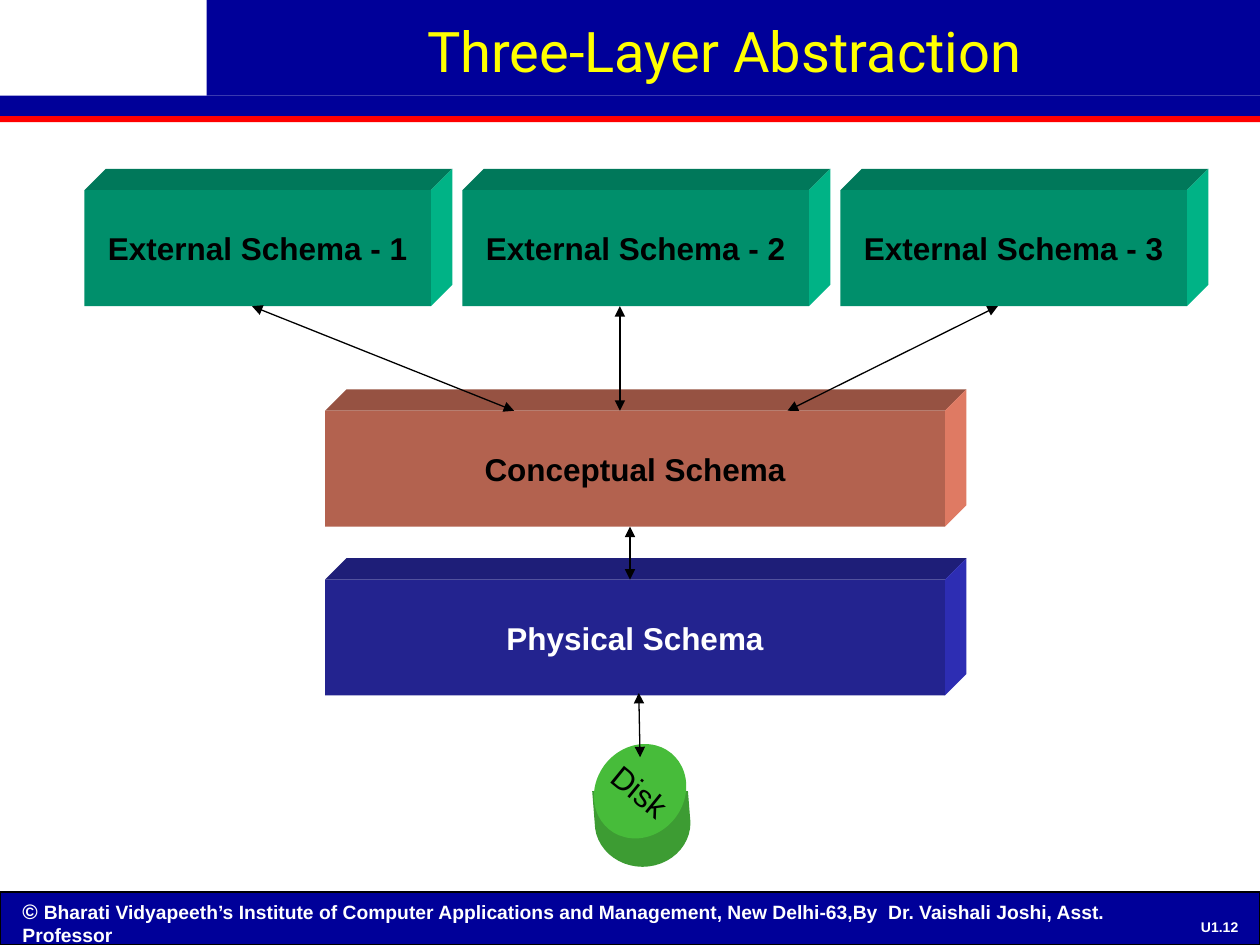
"""Build the three-layer database abstraction slide."""
from math import cos, pi, sin

from lxml.etree import SubElement
from pptx import Presentation
from pptx.dml.color import RGBColor
from pptx.enum.shapes import MSO_CONNECTOR, MSO_SHAPE
from pptx.enum.text import MSO_ANCHOR, PP_ALIGN
from pptx.oxml.ns import qn
from pptx.util import Inches, Pt

NAVY = RGBColor(0x00, 0x00, 0x99)
RED = RGBColor(0xFF, 0x00, 0x00)
YELLOW = RGBColor(0xFF, 0xFF, 0x00)
WHITE = RGBColor(0xFF, 0xFF, 0xFF)
BLACK = RGBColor(0x00, 0x00, 0x00)
GREEN = (RGBColor(0x00, 0x8F, 0x6B), RGBColor(0x00, 0x78, 0x5A), RGBColor(0x00, 0xB3, 0x86))
CORAL = (RGBColor(0xB3, 0x62, 0x4F), RGBColor(0x96, 0x52, 0x42), RGBColor(0xDF, 0x7A, 0x63))
BLUE = (RGBColor(0x23, 0x23, 0x8F), RGBColor(0x1E, 0x1E, 0x78), RGBColor(0x2D, 0x2D, 0xB3))
DISK_TOP = RGBColor(0x47, 0xBC, 0x3A)
DISK_SIDE = RGBColor(0x3D, 0x9C, 0x33)


class Deck:
    """Hold the style and the current slide."""

    font = "Arial"
    size = 18
    depth = 0.17
    box_height = 0.92

    def __init__(self):
        self.prs = Presentation()
        self.prs.slide_width = Inches(10)
        self.prs.slide_height = Inches(7.5)
        self.s = self.prs.slides.add_slide(self.prs.slide_layouts[5])

    def add_runs(self, sp, runs, color, align=PP_ALIGN.CENTER, anchor=MSO_ANCHOR.MIDDLE,
                 wrap=False, bold=True, font=None):
        tf = sp.text_frame
        tf.word_wrap = wrap
        tf.vertical_anchor = anchor
        p = tf.paragraphs[0]
        p.alignment = align
        for text, size in runs:
            r = p.add_run()
            r.text = text
            r.font.name = font or self.font
            r.font.size = Pt(size)
            r.font.bold = bold
            r.font.color.rgb = color

    def paint(self, sp, fill):
        sp.shadow.inherit = False
        sp.fill.solid()
        sp.fill.fore_color.rgb = fill
        sp.line.fill.background()
        return sp

    def shape(self, x, y, w, h, fill, kind=MSO_SHAPE.RECTANGLE):
        sp = self.s.shapes.add_shape(kind, Inches(x), Inches(y), Inches(w), Inches(h))
        return self.paint(sp, fill)

    def polygon(self, points, fill):
        first, *rest = [(Inches(x), Inches(y)) for x, y in points]
        builder = self.s.shapes.build_freeform(*first)
        builder.add_line_segments(rest)
        return self.paint(builder.convert_to_shape(), fill)

    def text(self, x, y, w, h, runs, color, **style):
        sp = self.s.shapes.add_textbox(Inches(x), Inches(y), Inches(w), Inches(h))
        self.add_runs(sp, runs, color, **style)

    def title(self, text):
        sp = self.s.shapes.title
        sp.left, sp.top, sp.width, sp.height = Inches(1.5), Inches(0.08), Inches(8.5), Inches(0.84)
        self.add_runs(sp, [(text, 32)], YELLOW, anchor=MSO_ANCHOR.TOP, wrap=True,
                      bold=False, font="Roboto")
        sp.element.getparent().append(sp.element)

    def block(self, x, y, w, text, colors, color=BLACK):
        face, top, side = colors
        d, right, bottom = self.depth, x + w, y + self.box_height
        self.polygon([(x, y), (x + d, y - d), (right + d, y - d), (right, y)], top)
        self.polygon([(right, y), (right + d, y - d), (right + d, bottom - d), (right, bottom)], side)
        self.add_runs(self.shape(x, y, w, self.box_height, face), [(text, self.size)], color)

    def disk(self, x, y, text):
        rx, ry, dx, dy = 0.38, 0.35, 0.02, 0.25
        arc = [(x + dx + rx * cos(i * pi / 24), y + dy + ry * sin(i * pi / 24)) for i in range(25)]
        self.polygon([(x - rx, y), (x + rx, y), *arc], DISK_SIDE)
        sp = self.shape(x - 0.35, y - 0.39, 0.7, 0.78, DISK_TOP, MSO_SHAPE.OVAL)
        sp.rotation = 39.1
        self.add_runs(sp, [(text, self.size)], BLACK, bold=False)

    def arrow(self, x1, y1, x2, y2):
        c = self.s.shapes.add_connector(
            MSO_CONNECTOR.STRAIGHT, Inches(x1), Inches(y1), Inches(x2), Inches(y2))
        c.line.color.rgb = BLACK
        c.line.width = Pt(0.75)
        ln = c.element.spPr.find(qn("a:ln"))
        for end in ("a:headEnd", "a:tailEnd"):
            SubElement(ln, qn(end), type="triangle")
        SubElement(c.element.spPr, qn("a:effectLst"))


def main():
    deck = Deck()
    deck.shape(0, 0.92, 10, 0.05, RED)
    deck.shape(1.64, 0, 8.36, 0.76, NAVY)
    deck.shape(0, 0.76, 10, 0.16, NAVY)
    footer = deck.shape(0, 7.08, 10, 0.42, NAVY)
    footer.line.color.rgb = BLACK
    footer.line.width = Pt(0.75)
    deck.text(0.08, 7.08, 9.48, 0.42, [
        ("© ", 12),
        ("Bharati Vidyapeeth’s Institute of Computer Applications and Management, "
         "New Delhi-63,By  Dr. Vaishali Joshi, Asst. Professor", 11),
    ], WHITE, align=PP_ALIGN.LEFT, anchor=MSO_ANCHOR.TOP, wrap=True)
    deck.text(9.42, 7.26, 0.52, 0.19, [("U1.12", 8)], WHITE)

    deck.block(2.58, 4.6, 4.92, "Physical Schema", BLUE, WHITE)
    deck.block(2.58, 3.26, 4.92, "Conceptual Schema", CORAL)
    for i in range(3):
        deck.block(0.67 + 3 * i, 1.51, 2.75, f"External Schema - {i + 1}", GREEN)
    deck.disk(5.08, 6.28, "Disk")

    for ends in [(2, 2.43, 4.08, 3.26), (4.92, 2.43, 4.92, 3.26), (6.25, 3.26, 7.92, 2.43),
                 (5, 4.18, 5, 4.6), (5.07, 5.5, 5.08, 6.01)]:
        deck.arrow(*ends)
    deck.title("Three-Layer Abstraction")
    deck.prs.save("out.pptx")


if __name__ == "__main__":
    main()
